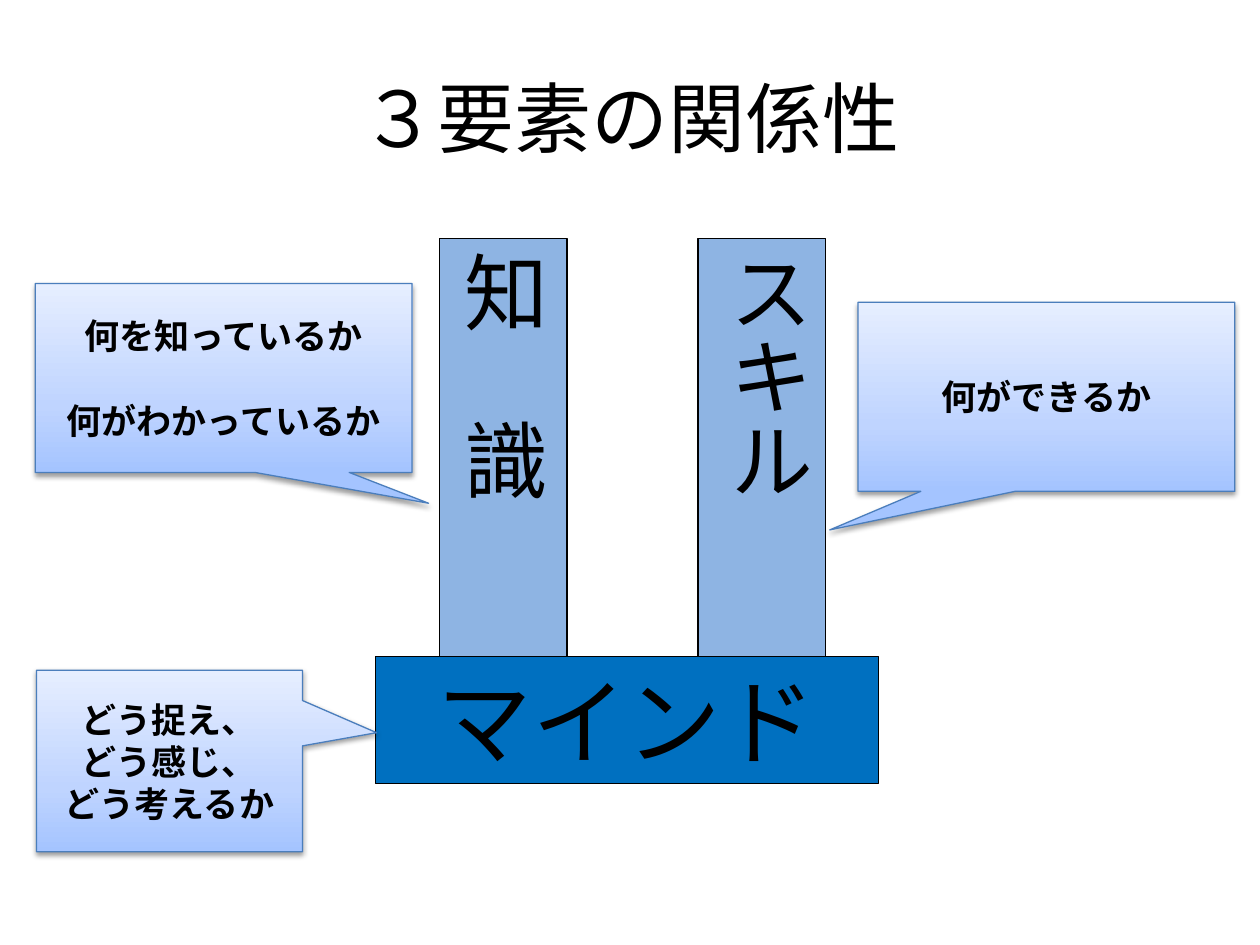
from copy import deepcopy

from lxml.etree import SubElement
from pptx import Presentation
from pptx.dml.color import RGBColor
from pptx.enum.shapes import MSO_SHAPE as SHAPE
from pptx.enum.text import MSO_ANCHOR as ANCHOR, PP_ALIGN as ALIGN
from pptx.oxml.ns import qn
from pptx.util import Inches, Pt

BLACK = RGBColor(0x00, 0x00, 0x00)
BASE_BLUE = RGBColor(0x00, 0x70, 0xC0)
PILLAR_BLUE = RGBColor(0x8E, 0xB4, 0xE3)
CALLOUT_LINE = RGBColor(0x4B, 0x7E, 0xBC)
CALLOUT_STOPS = [(0, RGBColor(0xA4, 0xC4, 0xFF)),
                 (0.35, RGBColor(0xBF, 0xD4, 0xFF)),
                 (1, RGBColor(0xE6, 0xEE, 0xFF))]
FONT = "Noto Sans CJK JP"


def add_run(p, text, size, bold=False, latin=FONT):
    r = p.add_run()
    r.text = text
    r.font.size, r.font.bold, r.font.name = Pt(size), bold, latin
    r.font.color.rgb = BLACK
    SubElement(r.font._element, qn("a:ea"), typeface=FONT)


def add_box(shapes, kind, left, top, width, height, line):
    sp = shapes.add_shape(kind, Inches(left), Inches(top), Inches(width), Inches(height))
    sp.shadow.inherit = False
    sp.line.color.rgb = line
    sp.line.width = Pt(0.75)
    sp.text_frame.word_wrap = True
    return sp


prs = Presentation()
prs.slide_width, prs.slide_height = Inches(10), Inches(7.5)
s = prs.slides.add_slide(prs.slide_layouts[5])

# Title
title = s.shapes.title
title.left, title.top, title.width, title.height = (Inches(v) for v in (0.5, 0.3, 9, 1.25))
title.text_frame.vertical_anchor = ANCHOR.MIDDLE
p = title.text_frame.paragraphs[0]
p.alignment = ALIGN.CENTER
add_run(p, "３要素の関係性", 44, latin="Cabin")

# Base with two pillars standing on it
BASE_TOP, PILLAR_TOP, THICK = 5.21, 1.89, 1.01
group = s.shapes.add_group_shape()
base = add_box(group.shapes, SHAPE.RECTANGLE, 2.98, BASE_TOP, 3.99, THICK, BLACK)
base.fill.solid()
base.fill.fore_color.rgb = BASE_BLUE
base.text_frame.vertical_anchor = ANCHOR.MIDDLE
p = base.text_frame.paragraphs[0]
p.alignment = ALIGN.CENTER
add_run(p, "マインド", 54)

for left, text, anchor in [(3.49, "知　識", ANCHOR.MIDDLE), (5.54, "スキル", ANCHOR.TOP)]:
    pillar = add_box(group.shapes, SHAPE.RECTANGLE, left, PILLAR_TOP,
                     THICK, BASE_TOP - PILLAR_TOP, BLACK)
    pillar.fill.solid()
    pillar.fill.fore_color.rgb = PILLAR_BLUE
    tf = pillar.text_frame
    tf.vertical_anchor = anchor
    tf._txBody.bodyPr.set("vert", "eaVert")
    p = tf.paragraphs[0]
    p.alignment = ALIGN.LEFT
    add_run(p, text, 48)

# Callouts: box, pointer tip, gap between lines, lines
callouts = [
    ((0.28, 2.25, 2.99, 1.5), (0.544, 0.663), 24, ["何を知っているか", "何がわかっているか"]),
    ((6.81, 2.4, 2.99, 1.5), (-0.575, 0.704), 0, ["何ができるか"]),
    ((0.29, 5.32, 2.11, 1.44), (0.779, -0.156), 0, ["どう捉え、", "どう感じ、", "どう考えるか"]),
]
for box, tip, gap, lines in callouts:
    sp = add_box(s.shapes, SHAPE.RECTANGULAR_CALLOUT, *box, CALLOUT_LINE)
    sp.adjustments[0], sp.adjustments[1] = tip

    sp.fill.gradient()
    sp.fill.gradient_angle = 90
    stop_list = sp._element.spPr.find(qn("a:gradFill")).find(qn("a:gsLst"))
    stop_list.append(deepcopy(stop_list[0]))
    for stop, (position, color) in zip(sp.fill.gradient_stops, CALLOUT_STOPS):
        stop.position = position
        stop.color.rgb = color

    effects = sp._element.spPr.find(qn("a:effectLst"))
    shadow = SubElement(effects, qn("a:outerShdw"), blurRad=str(Pt(3.1)),
                        dist=str(Pt(1.6)), dir="5400000", rotWithShape="0")
    shadow_color = SubElement(shadow, qn("a:srgbClr"), val=str(BLACK))
    SubElement(shadow_color, qn("a:alpha"), val="38000")

    tf = sp.text_frame
    tf.vertical_anchor = ANCHOR.MIDDLE
    for i, text in enumerate(lines):
        p = tf.add_paragraph() if i else tf.paragraphs[0]
        p.alignment = ALIGN.CENTER
        p.line_spacing = Pt(24)
        p.space_before = Pt(gap if i else 0)
        add_run(p, text, 20, bold=True)

prs.save("out.pptx")
